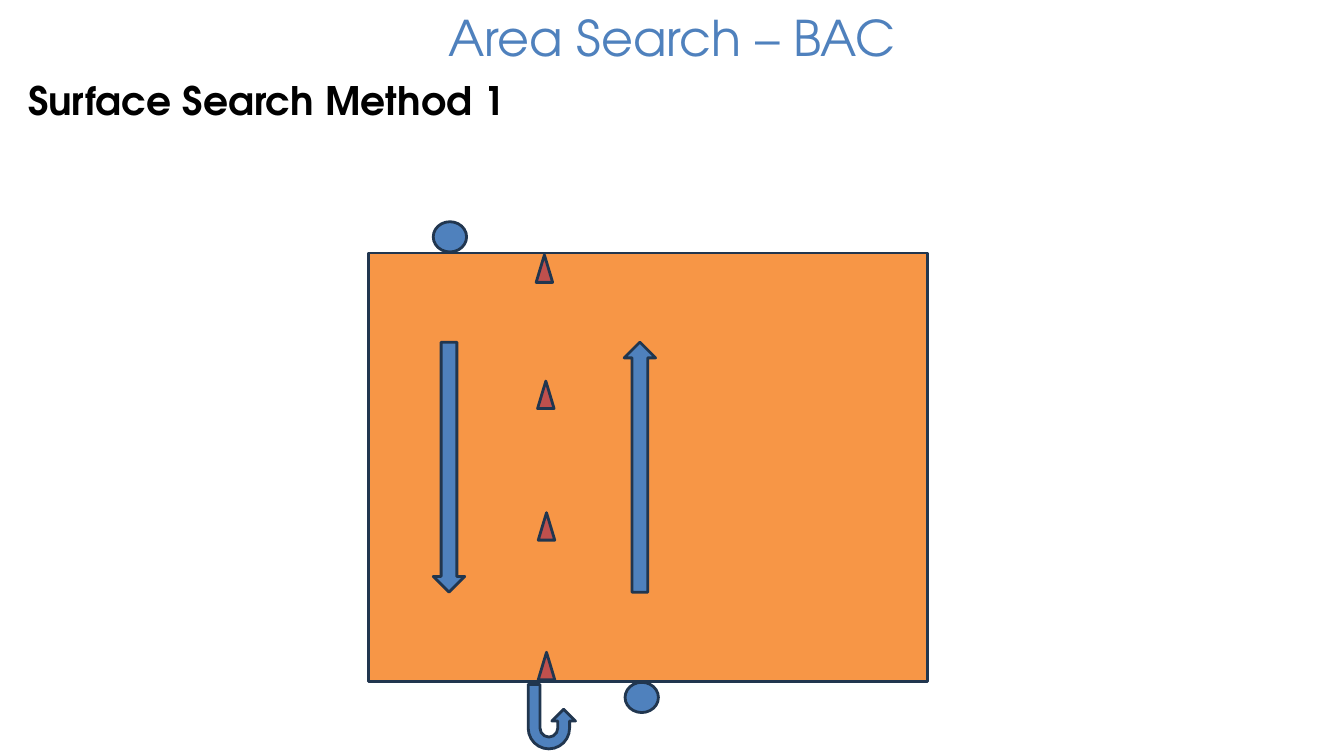
from pptx import Presentation
from pptx.dml.color import RGBColor
from pptx.enum import shapes, text
from pptx.oxml.ns import qn
from pptx.util import Pt

FONT = "TeX Gyre Adventor"
BLUE, ORANGE, RED = "4F81BD", "F79646", "C0504D"
OUTLINE, BLACK = "21364F", "000000"
KIND = shapes.MSO_SHAPE


def color(hex_value):
    return RGBColor.from_string(hex_value)


def add_figure(slide, kind, left, top, width, height, fill, rotation=0):
    figure = slide.shapes.add_shape(kind, Pt(left), Pt(top), Pt(width), Pt(height))
    figure.shadow.inherit = False
    figure.fill.solid()
    figure.fill.fore_color.rgb = color(fill)
    figure.line.color.rgb = color(OUTLINE)
    figure.line.width = Pt(2)
    figure.rotation = rotation
    return figure


def add_heading(slide, box, wording, size, hex_value, align, bold=False):
    left, top, width, height = box
    heading = slide.shapes.add_textbox(Pt(left), Pt(top), Pt(width), Pt(height))
    frame = heading.text_frame
    frame.word_wrap = True
    frame.vertical_anchor = text.MSO_ANCHOR.MIDDLE
    frame.text = wording
    line = frame.paragraphs[0]
    line.alignment = align
    font = line.runs[0].font
    font.name, font.size, font.bold = FONT, Pt(size), bold
    font.color.rgb = color(hex_value)


def add_search_area(slide, box):
    left, top, width, height = box
    bottom = top + height
    add_figure(slide, KIND.RECTANGLE, left, top, width, height, ORANGE)

    # Searchers: one above the first lane, one below the second
    searcher_w, searcher_h = 23.8, 21.6
    for lane, searcher_top in ((46, top - searcher_h - 0.7), (183, bottom + 0.7)):
        add_figure(slide, KIND.FLOWCHART_CONNECTOR, left + lane, searcher_top,
                   searcher_w, searcher_h, BLUE)

    # Search directions: down the first lane, back up the second
    arrow_h = 178.6
    for lane, rotation in ((46, 0), (182.3, 180)):
        add_figure(slide, KIND.DOWN_ARROW, left + lane, top + (height - arrow_h) / 2,
                   22.5, arrow_h, BLUE, rotation)

    # Markers between the lanes
    for marker_x, marker_y in ((119.5, 1.4), (120.5, 91.5), (121, 185.5), (121, 285.2)):
        add_figure(slide, KIND.ISOSCELES_TRIANGLE, left + marker_x, top + marker_y,
                   11.8, 19.6, RED)

    # Turn at the end of the first lane
    turn = add_figure(slide, KIND.U_TURN_ARROW, left + 113.8, bottom + 2.2,
                      33.8, 46, BLUE, 180)
    turn.adjustments[4] = 0.616
    turn._element.spPr.find(qn("a:xfrm")).set("flipH", "1")


def main():
    deck = Presentation()
    deck.slide_width, deck.slide_height = Pt(960), Pt(540)
    slide = deck.slides.add_slide(deck.slide_layouts[6])

    add_search_area(slide, (263.5, 180.7, 398.9, 306))

    # Title and method
    add_heading(slide, (221.8, 0, 516.2, 52.6), "Area Search – BAC", 35.1, BLUE,
                text.PP_ALIGN.CENTER)
    add_heading(slide, (13, 51.1, 366.5, 41), "Surface Search Method 1", 28, BLACK,
                text.PP_ALIGN.LEFT, bold=True)

    deck.save("out.pptx")


if __name__ == "__main__":
    main()
